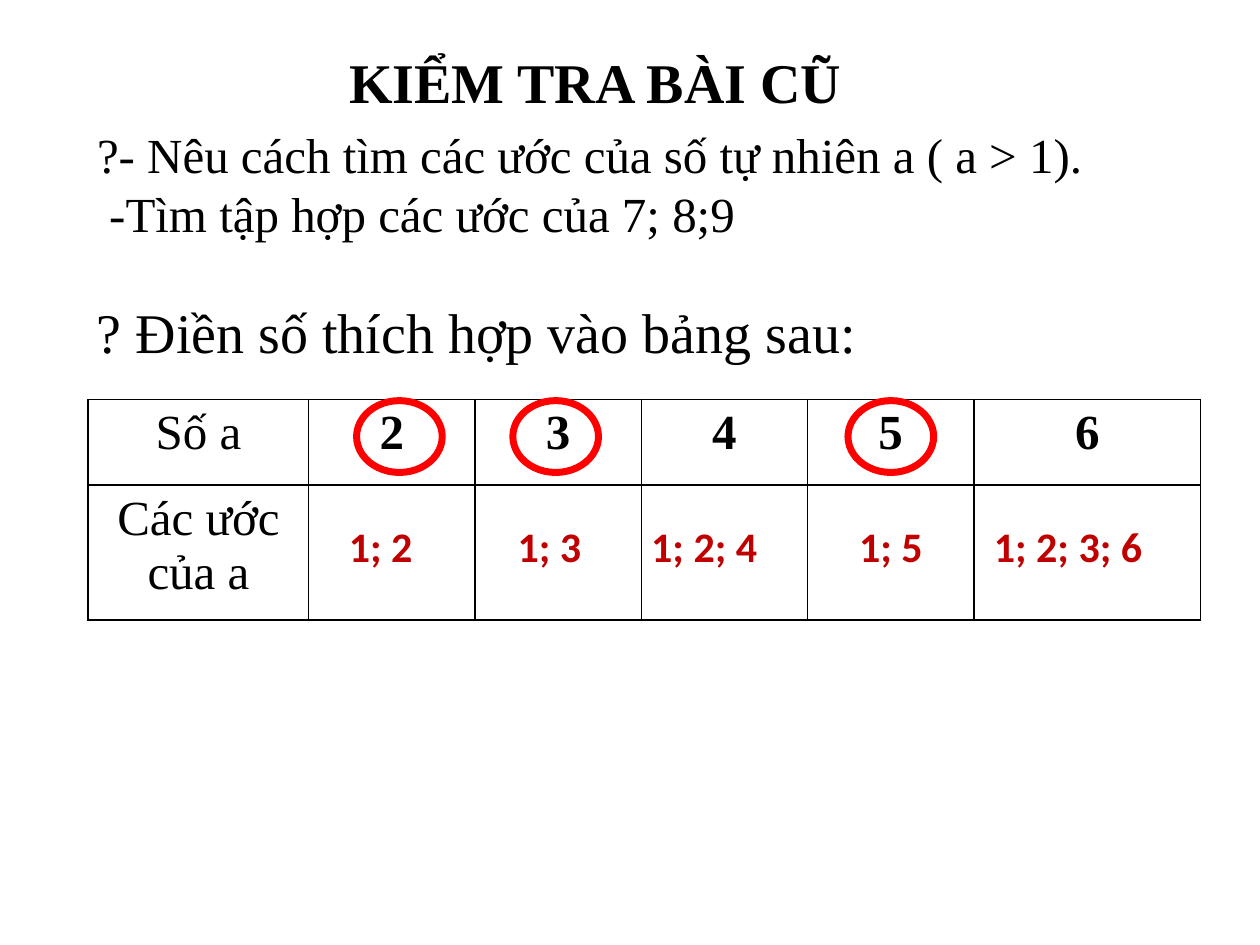
from dataclasses import dataclass

from lxml import etree
from pptx import Presentation
from pptx.dml.color import RGBColor
from pptx.enum.shapes import MSO_SHAPE
from pptx.enum.text import MSO_ANCHOR, MSO_AUTO_SIZE, PP_ALIGN
from pptx.oxml.ns import qn
from pptx.util import Inches, Pt

ELLIPSE = MSO_SHAPE.OVAL
TOP, MIDDLE = MSO_ANCHOR.TOP, MSO_ANCHOR.MIDDLE
LEFT, CENTER = PP_ALIGN.LEFT, PP_ALIGN.CENTER
NO_FIT = MSO_AUTO_SIZE.NONE
TITLE_AND_CONTENT = 1


@dataclass(frozen=True)
class Theme:
    serif: str = "Times New Roman"
    sans: str = "Calibri"
    ink: str = "000000"
    answer: str = "C00000"
    ring: str = "FF0000"
    heading_size: int = 32
    text_size: int = 28
    answer_size: int = 24
    border_width: int = 1
    ring_width: int = 4


THEME = Theme()

# Content, with boxes as (left, top, width, height) in inches
TITLE = "KIỂM TRA BÀI CŨ"
TITLE_BOX = (2.67, 0.33, 4.92, 0.63)
QUESTIONS = [
    "?- Nêu cách tìm các ước của số tự nhiên a ( a > 1).",
    " -Tìm tập hợp các ước của 7; 8;9",
]
QUESTIONS_BOX = (0.67, 1.08, 8.73, 0.75)
TASK = "? Điền số thích hợp vào bảng sau:"
TASK_BOX = (0.67, 2.25, 6.75, 0.75)

ROW_LABELS = ["Số a", "Các ước của a"]
NUMBERS = ["2", "3", "4", "5", "6"]
TABLE_LEFT, TABLE_TOP = 0.7, 3.17
COLUMN_WIDTHS = [1.75] + [1.32] * 4 + [1.8]
ROW_HEIGHTS = [0.68, 1.07]

# Divisors of each number: text, left, width
ANSWERS = [
    ("1; 2", 2.67, 0.92),
    ("1; 3", 4.01, 0.92),
    ("1; 2; 4", 5.07, 1.25),
    ("1; 5", 6.72, 0.92),
    ("1; 2; 3; 6", 7.79, 1.67),
]
ANSWER_TOP, ANSWER_HEIGHT = 4.08, 0.5
PRIME_RING_LEFTS = [2.83, 4.07, 6.73]
RING_TOP, RING_WIDTH, RING_HEIGHT = 3.18, 0.68, 0.57


def inches(box):
    return [Inches(length) for length in box]


def write(frame, lines, size, font=THEME.serif, color=THEME.ink,
          bold=False, align=LEFT):
    for index, line in enumerate(lines):
        paragraph = frame.add_paragraph() if index else frame.paragraphs[0]
        paragraph.alignment = align
        paragraph.space_before = Pt(0)
        run = paragraph.add_run()
        run.text = line
        run.font.name = font
        run.font.size = Pt(size)
        run.font.bold = bold
        run.font.color.rgb = RGBColor.from_string(color)


def set_frame(shape, anchor):
    frame = shape.text_frame
    frame.word_wrap = True
    frame.auto_size = NO_FIT
    frame.vertical_anchor = anchor
    return frame


def fill_placeholder(shape, box, anchor):
    shape.left, shape.top, shape.width, shape.height = inches(box)
    return set_frame(shape, anchor)


def add_text(slide, box, anchor):
    return set_frame(slide.shapes.add_textbox(*inches(box)), anchor)


def remove_bullets(frame):
    for paragraph in frame.paragraphs:
        properties = paragraph._p.get_or_add_pPr()
        properties.set("marL", "0")
        properties.set("indent", "0")
        etree.SubElement(properties, qn("a:buNone"))


def outline_cell(cell):
    properties = cell._tc.get_or_add_tcPr()
    for position, side in enumerate(("a:lnL", "a:lnR", "a:lnT", "a:lnB")):
        border = etree.Element(qn(side), w=str(Pt(THEME.border_width)))
        fill = etree.SubElement(border, qn("a:solidFill"))
        etree.SubElement(fill, qn("a:srgbClr"), val=THEME.ink)
        properties.insert(position, border)


def add_divisor_table(slide):
    table = slide.shapes.add_table(
        len(ROW_HEIGHTS), len(COLUMN_WIDTHS),
        *inches((TABLE_LEFT, TABLE_TOP, sum(COLUMN_WIDTHS), sum(ROW_HEIGHTS))),
    ).table
    table.first_row = table.horz_banding = False
    for column, width in zip(table.columns, COLUMN_WIDTHS):
        column.width = Inches(width)
    for row, height in zip(table.rows, ROW_HEIGHTS):
        row.height = Inches(height)
    for cell in table.iter_cells():
        cell.fill.background()
        outline_cell(cell)
    for row, label in enumerate(ROW_LABELS):
        write(table.cell(row, 0).text_frame, [label], THEME.text_size,
              align=CENTER)
    for column, number in enumerate(NUMBERS, start=1):
        write(table.cell(0, column).text_frame, [number], THEME.text_size,
              bold=True, align=CENTER)


def add_ring(slide, left):
    ring = slide.shapes.add_shape(
        ELLIPSE, *inches((left, RING_TOP, RING_WIDTH, RING_HEIGHT)))
    ring.shadow.inherit = False
    ring.fill.background()
    ring.line.color.rgb = RGBColor.from_string(THEME.ring)
    ring.line.width = Pt(THEME.ring_width)


def main():
    presentation = Presentation()
    presentation.slide_width, presentation.slide_height = inches((10, 7.5))
    slide = presentation.slides.add_slide(
        presentation.slide_layouts[TITLE_AND_CONTENT])

    title = fill_placeholder(slide.shapes.title, TITLE_BOX, TOP)
    write(title, [TITLE], THEME.heading_size, bold=True)
    questions = fill_placeholder(slide.placeholders[1], QUESTIONS_BOX, MIDDLE)
    write(questions, QUESTIONS, THEME.text_size)
    remove_bullets(questions)
    write(add_text(slide, TASK_BOX, MIDDLE), [TASK], THEME.heading_size)

    add_divisor_table(slide)
    for divisors, left, width in ANSWERS:
        frame = add_text(slide, (left, ANSWER_TOP, width, ANSWER_HEIGHT), TOP)
        write(frame, [divisors], THEME.answer_size, THEME.sans, THEME.answer,
              bold=True)
    for left in PRIME_RING_LEFTS:
        add_ring(slide, left)

    presentation.save("out.pptx")


if __name__ == "__main__":
    main()
